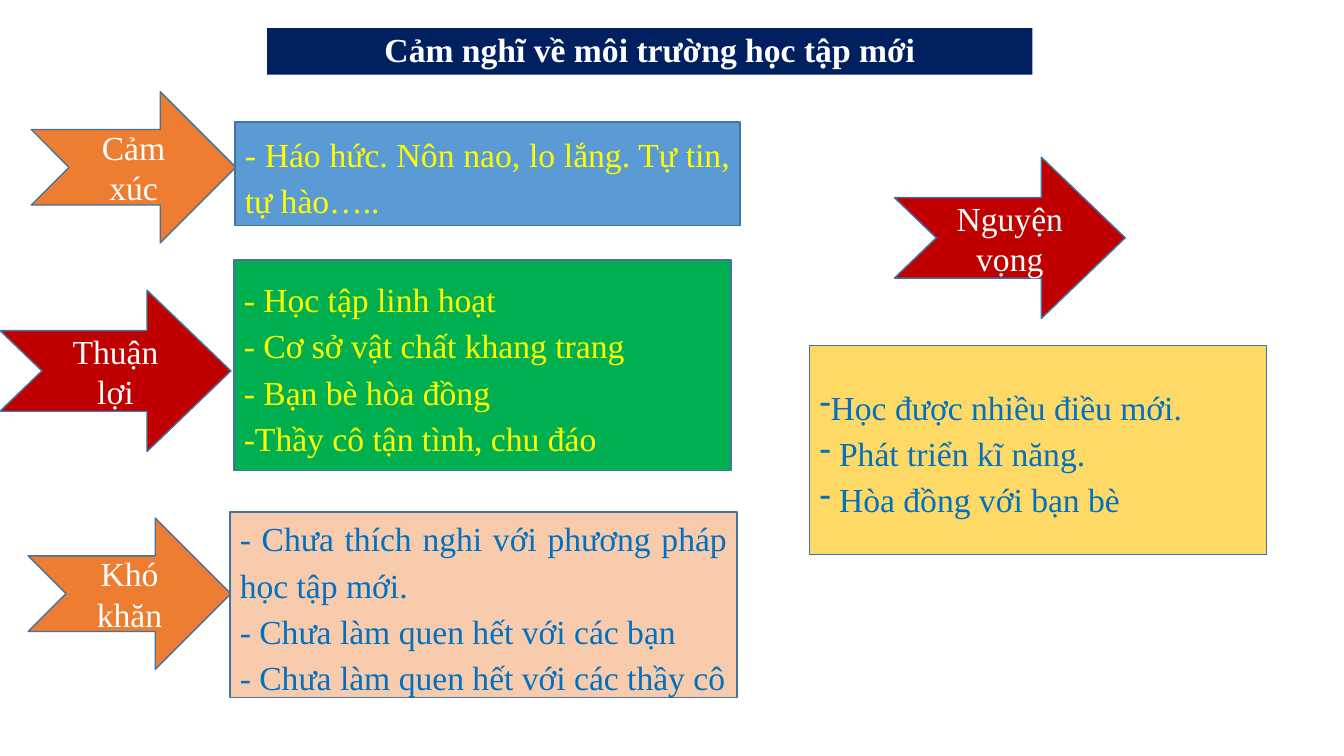
from dataclasses import dataclass

from lxml.etree import SubElement
from pptx import Presentation
from pptx.dml.color import RGBColor
from pptx.enum.shapes import MSO_SHAPE as SHAPE
from pptx.enum.text import MSO_ANCHOR as ANCHOR, MSO_AUTO_SIZE as AUTO_SIZE, PP_ALIGN as ALIGN
from pptx.oxml.ns import qn
from pptx.util import Inches, Pt


@dataclass(frozen=True)
class Theme:
    """Colours and type of the slide."""
    font: str = "Times New Roman"
    size: int = 24
    line: str = "43739E"
    navy: str = "002060"
    orange: str = "ED7D31"
    red: str = "C00000"
    blue: str = "5B9BD5"
    green: str = "00B050"
    peach: str = "F8CBAD"
    gold: str = "FFD966"
    white: str = "FFFFFF"
    yellow: str = "FFFF00"
    ink: str = "0070C0"


THEME = Theme()


def paint(sp, fill):
    """Give a shape a solid fill."""
    sp.fill.solid()
    sp.fill.fore_color.rgb = RGBColor.from_string(fill)


def write(sp, lines, color, align=ALIGN.CENTER, spacing=1.0, bold=False, bullet=None):
    """Write one paragraph per line into a shape."""
    tf = sp.text_frame
    tf.word_wrap = True
    tf.auto_size = AUTO_SIZE.NONE
    tf.vertical_anchor = ANCHOR.MIDDLE
    for i, line in enumerate(lines):
        p = tf.add_paragraph() if i else tf.paragraphs[0]
        p.alignment = align
        p.line_spacing = spacing
        if bullet:
            pPr = p._p.get_or_add_pPr()
            pPr.set("marL", "0")
            pPr.set("indent", "0")
            SubElement(pPr, qn("a:buFontTx"))
            SubElement(pPr, qn("a:buChar")).set("char", bullet)
        r = p.add_run()
        r.text = line
        r.font.name = THEME.font
        r.font.size = Pt(THEME.size)
        r.font.bold = bold
        r.font.color.rgb = RGBColor.from_string(color)


def add_block(slide, kind, box, fill):
    """Add an outlined shape without a shadow."""
    sp = slide.shapes.add_shape(kind, *map(Inches, box))
    sp.shadow.inherit = False
    paint(sp, fill)
    sp.line.color.rgb = RGBColor.from_string(THEME.line)
    sp.line.width = Pt(1)
    return sp


def add_title(slide, box, text):
    """Turn the title placeholder into a banner."""
    sp = slide.shapes.title
    sp.left, sp.top, sp.width, sp.height = map(Inches, box)
    paint(sp, THEME.navy)
    write(sp, [text], THEME.white, spacing=0.9, bold=True)


def add_topic(slide, box, offset, size, label, arrow_fill, lines, fill, color,
              head=0.5, bullet=None):
    """Place a text panel in the box and its labelled arrow at an offset from it."""
    left, top = box[:2]
    arrow_box = (left + offset[0], top + offset[1], *size)
    arrow = add_block(slide, SHAPE.NOTCHED_RIGHT_ARROW, arrow_box, arrow_fill)
    arrow.adjustments[1] = head
    write(arrow, [label], THEME.white)
    panel = add_block(slide, SHAPE.RECTANGLE, box, fill)
    write(panel, lines, color, align=ALIGN.JUSTIFY, spacing=1.15, bullet=bullet)


def main():
    """Build the slide and save it."""
    prs = Presentation()
    prs.slide_width, prs.slide_height = Inches(13.33), Inches(7.5)
    slide = prs.slides.add_slide(prs.slide_layouts[5])
    add_title(slide, (2.65, 0.28, 7.59, 0.46), "Cảm nghĩ về môi trường học tập mới")
    add_topic(slide, (2.33, 1.21, 5.01, 1.03), (-2.02, -0.3), (2.03, 1.5),
              "Cảm xúc", THEME.orange,
              ["- Háo hức. Nôn nao, lo lắng. Tự tin, tự hào….."],
              THEME.blue, THEME.yellow)
    add_topic(slide, (2.32, 2.58, 4.93, 2.09), (-2.32, 0.3), (2.29, 1.6),
              "Thuận lợi", THEME.red,
              ["- Học tập linh hoạt", "- Cơ sở vật chất khang trang",
               "- Bạn bè hòa đồng", "-Thầy cô tận tình, chu đáo"],
              THEME.green, THEME.yellow, head=0.52)
    add_topic(slide, (2.28, 5.08, 5.03, 1.84), (-2, 0.06), (2.01, 1.5),
              "Khó khăn", THEME.orange,
              ["- Chưa thích nghi với phương pháp học tập mới.",
               "- Chưa làm quen hết với các bạn",
               "- Chưa làm quen hết với các thầy cô"],
              THEME.peach, THEME.ink)
    add_topic(slide, (8.03, 3.43, 4.53, 2.07), (0.84, -1.87), (2.29, 1.6),
              "Nguyện vọng", THEME.red,
              ["Học được nhiều điều mới.", " Phát triển kĩ năng.", " Hòa đồng với bạn bè"],
              THEME.gold, THEME.ink, head=0.52, bullet="-")
    prs.save("out.pptx")


if __name__ == "__main__":
    main()
